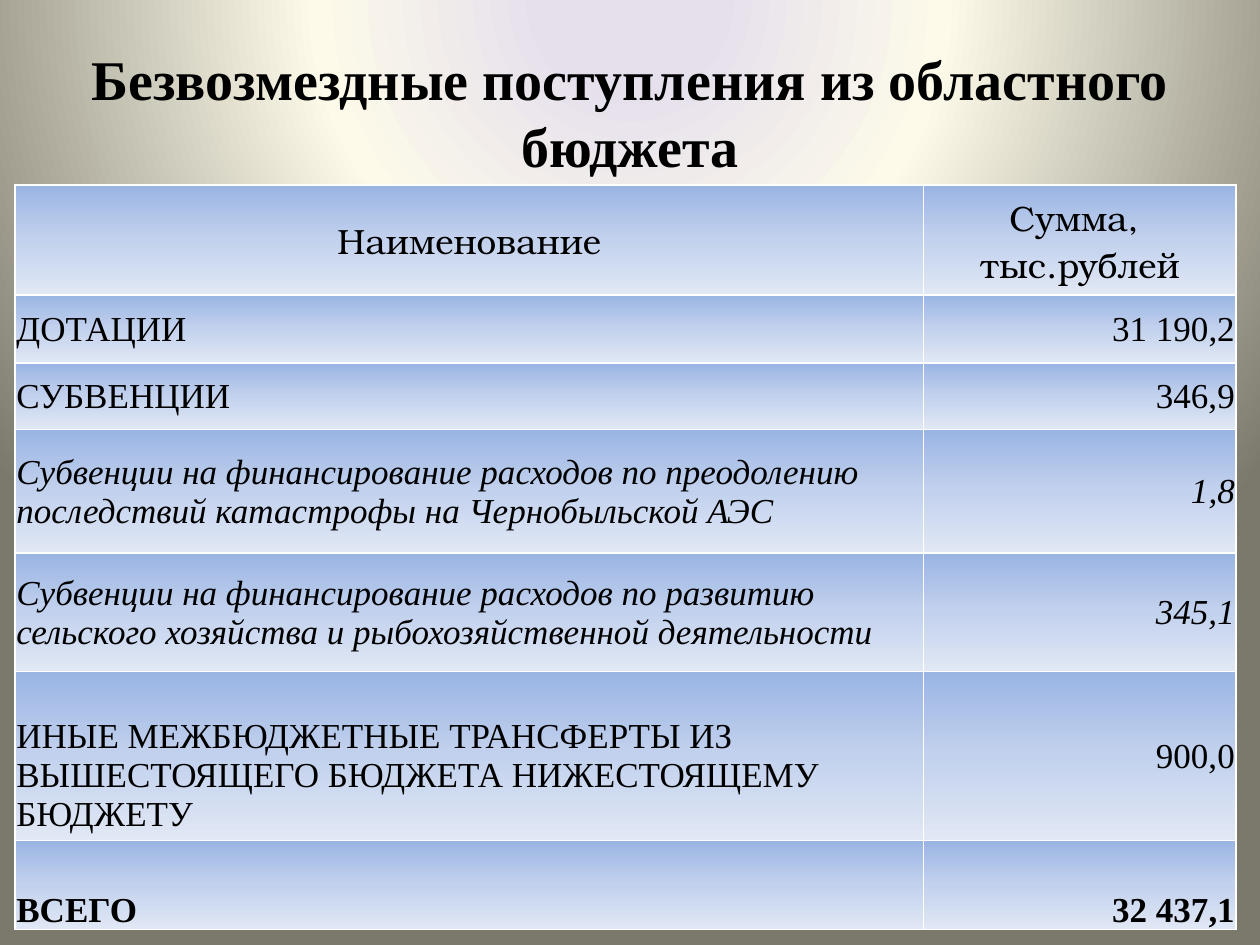
from lxml import etree
from pptx import Presentation
from pptx.dml.color import RGBColor
from pptx.enum.text import MSO_ANCHOR, MSO_AUTO_SIZE, PP_ALIGN
from pptx.oxml.ns import qn
from pptx.util import Inches, Pt

LEFT, CENTER, RIGHT = PP_ALIGN.LEFT, PP_ALIGN.CENTER, PP_ALIGN.RIGHT
TOP, MIDDLE, BOTTOM = MSO_ANCHOR.TOP, MSO_ANCHOR.MIDDLE, MSO_ANCHOR.BOTTOM
NO_AUTOFIT = MSO_AUTO_SIZE.NONE

WIDTH, HEIGHT = 10, 7.5
SERIF, HEADER_FONT = "Times New Roman", "TeX Gyre Bonum"
COLORS = {
    "text": "000000",
    "border": "FFFFFF",
    "glow": "E6E0EC",
    "cream": "FDFAEA",
    "olive": "7B796B",
    "cell_top": "9AB5E4",
    "cell_middle": "C2D1ED",
    "cell_bottom": "E1E8F5",
}
BACKGROUND_STOPS = [(11, "glow"), (40, "cream"), (100, "olive")]
CELL_STOPS = [(0, "cell_top"), (50, "cell_middle"), (100, "cell_bottom")]

COLUMN_WIDTHS = [7.21, 2.48]
HEADER = ("Наименование", "Сумма, \vтыс.рублей")
ROWS = [
    (0.54, "ДОТАЦИИ", "31 190,2", {}),
    (0.53, "СУБВЕНЦИИ", "346,9", {}),
    (0.98, "Субвенции на финансирование расходов по преодолению последствий "
           "катастрофы на Чернобыльской АЭС", "1,8", {"italic": True}),
    (0.94, "Субвенции на финансирование расходов по развитию сельского хозяйства "
           "и рыбохозяйственной деятельности", "345,1", {"italic": True}),
    (1.34, "ИНЫЕ МЕЖБЮДЖЕТНЫЕ ТРАНСФЕРТЫ ИЗ ВЫШЕСТОЯЩЕГО БЮДЖЕТА НИЖЕСТОЯЩЕМУ БЮДЖЕТУ",
     "900,0", {"name_anchor": BOTTOM, "name_inset": 0.05}),
    (0.71, "ВСЕГО", "32 437,1",
     {"bold": True, "name_anchor": BOTTOM, "value_anchor": BOTTOM}),
]


def write_text(text_frame, text, font=SERIF, size=20, bold=False, italic=False, align=LEFT):
    paragraph = text_frame.paragraphs[0]
    paragraph.text = text
    paragraph.alignment = align
    for run in paragraph.runs:
        run.font.name = font
        run.font.size = Pt(size)
        run.font.bold = bold
        run.font.italic = italic
        run.font.color.rgb = RGBColor.from_string(COLORS["text"])


def add_solid(parent, color):
    solid = etree.SubElement(parent, qn("a:solidFill"))
    etree.SubElement(solid, qn("a:srgbClr"), val=COLORS[color])


def add_gradient(parent, stops):
    gradient = etree.SubElement(parent, qn("a:gradFill"), rotWithShape="1")
    stop_list = etree.SubElement(gradient, qn("a:gsLst"))
    for percent, color in stops:
        stop = etree.SubElement(stop_list, qn("a:gs"), pos=str(percent * 1000))
        etree.SubElement(stop, qn("a:srgbClr"), val=COLORS[color])
    return gradient


class SlideBuilder:
    def __init__(self, presentation):
        self.slide = presentation.slides.add_slide(presentation.slide_layouts[5])

    def background(self):
        self.slide.background.fill.solid()
        properties = self.slide.element.find(".//" + qn("p:bgPr"))
        gradient = add_gradient(properties, BACKGROUND_STOPS)
        path = etree.SubElement(gradient, qn("a:path"), {"path": "circle"})
        etree.SubElement(path, qn("a:fillToRect"), l="50000", t="-80000", r="50000", b="180000")
        properties.replace(properties[0], gradient)

    def title(self, text, left, top, width, height):
        shape = self.slide.shapes.title
        shape.left, shape.top = Inches(left * WIDTH), Inches(top * HEIGHT)
        shape.width, shape.height = Inches(width * WIDTH), Inches(height * HEIGHT)
        text_frame = shape.text_frame
        text_frame.word_wrap = True
        text_frame.auto_size = NO_AUTOFIT
        text_frame.vertical_anchor = TOP
        write_text(text_frame, text, size=32, bold=True, align=CENTER)

    def cell(self, cell, text, anchor=MIDDLE, inset=0, **text_format):
        cell.vertical_anchor = anchor
        cell.margin_left = cell.margin_right = cell.margin_top = Inches(0.01)
        cell.margin_bottom = Inches(inset)
        write_text(cell.text_frame, text, **text_format)
        properties = cell._tc.get_or_add_tcPr()
        for side in ("lnL", "lnR", "lnT", "lnB"):
            add_solid(etree.SubElement(properties, qn("a:" + side), w=str(Pt(1))), "border")
        gradient = add_gradient(properties, CELL_STOPS)
        etree.SubElement(gradient, qn("a:lin"), ang="5400000", scaled="0")

    def table(self, left, top):
        heights = [0.87] + [row[0] for row in ROWS]
        frame = self.slide.shapes.add_table(
            len(heights), len(COLUMN_WIDTHS), Inches(left * WIDTH), Inches(top * HEIGHT),
            Inches(sum(COLUMN_WIDTHS)), Inches(sum(heights)))
        table = frame.table
        table.first_row = table.horz_banding = False
        for column, width in zip(table.columns, COLUMN_WIDTHS):
            column.width = Inches(width)
        for row, height in zip(table.rows, heights):
            row.height = Inches(height)
        for index, text in enumerate(HEADER):
            self.cell(table.cell(0, index), text, font=HEADER_FONT, align=CENTER)
        for index, (_, name, value, style) in enumerate(ROWS, 1):
            emphasis = {key: style.get(key, False) for key in ("bold", "italic")}
            self.cell(table.cell(index, 0), name, style.get("name_anchor", MIDDLE),
                      style.get("name_inset", 0), **emphasis)
            self.cell(table.cell(index, 1), value, style.get("value_anchor", MIDDLE),
                      align=RIGHT, **emphasis)


def main():
    presentation = Presentation()
    presentation.slide_width, presentation.slide_height = Inches(WIDTH), Inches(HEIGHT)
    builder = SlideBuilder(presentation)
    builder.background()
    builder.title("Безвозмездные поступления из областного бюджета", 0.03, 0.04, 0.94, 0.23)
    builder.table(0.012, 0.196)
    presentation.save("out.pptx")


if __name__ == "__main__":
    main()
